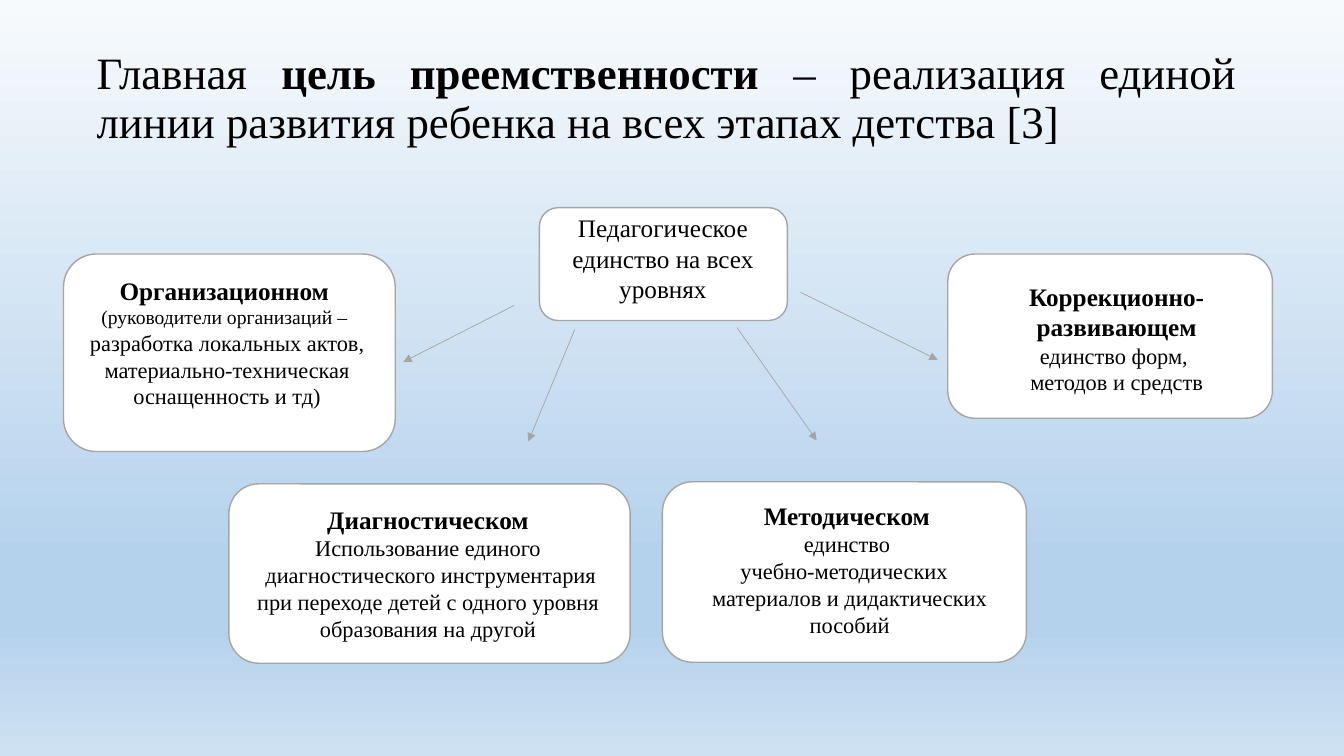
from copy import deepcopy

from lxml import etree
from pptx import Presentation
from pptx.dml.color import RGBColor
from pptx.enum.shapes import MSO_CONNECTOR, MSO_SHAPE
from pptx.enum.text import MSO_ANCHOR, PP_ALIGN
from pptx.oxml.ns import qn
from pptx.util import Inches, Pt

STRAIGHT, ROUNDED = MSO_CONNECTOR.STRAIGHT, MSO_SHAPE.ROUNDED_RECTANGLE
CENTER, JUSTIFY = PP_ALIGN.CENTER, PP_ALIGN.JUSTIFY
TOP, MIDDLE = MSO_ANCHOR.TOP, MSO_ANCHOR.MIDDLE

FONT, BLACK, WHITE, GREY = "Times New Roman", "000000", "FFFFFF", "A5A5A5"
BACKGROUND = [(0, "F7FAFD"), (0.74, "B5D2EC"), (0.83, "B5D2EC"), (1, "CEE1F2")]

# A paragraph is a list of runs: (text, size, bold)
TITLE_BOX = (0.86, 0.26, 11.5, 1.45)
TITLE = [[("Главная ", 32, False), ("цель преемственности ", 32, True),
          ("– реализация единой линии развития ребенка на всех этапах детства [3]", 32, False)]]

# Card: frame, text area, wrap, paragraphs (text, size, bold)
CARDS = [
    ((5.35, 2.06, 2.46, 1.12), (5.43, 2.06, 2.29, 1.01), True, [
        ("Педагогическое единство на всех уровнях", 18, False)]),
    ((0.63, 2.52, 3.29, 1.96), (0.72, 2.68, 3.01, 1.45), False, [
        ("Организационном", 18, True),
        ("(руководители организаций –", 14, False),
        (" разработка локальных актов,", 16, False),
        (" материально-техническая", 16, False),
        (" оснащенность и тд)", 16, False)]),
    ((2.27, 4.8, 3.98, 1.78), (2.32, 4.95, 3.85, 1.48), True, [
        ("Диагностическом", 18, True),
        ("Использование единого", 16, False),
        (" диагностического инструментария", 16, False),
        (" при переходе детей с одного уровня ", 16, False),
        ("образования на другой", 16, False)]),
    ((6.57, 4.78, 3.61, 1.79), (6.85, 4.91, 3.1, 1.78), False, [
        ("Методическом", 18, True),
        ("единство", 16, False),
        ("учебно-методических ", 16, False),
        (" материалов и дидактических", 16, False),
        (" пособий", 16, False)]),
    ((9.4, 2.52, 3.22, 1.63), (10.1, 2.74, 1.95, 1.25), False, [
        ("Коррекционно-", 18, True),
        ("развивающем", 18, True),
        ("единство форм, ", 16, False),
        ("методов и средств", 16, False)]),
]

ARROWS = [
    (5.1, 3.03, 4, 3.59),
    (5.7, 3.27, 5.24, 4.38),
    (7.31, 3.25, 8.1, 4.37),
    (7.94, 2.9, 9.3, 3.57),
]


def color(value):
    return RGBColor.from_string(value)


def inches(values):
    return [Inches(v) for v in values]


def paint_background(s):
    fill = s.background.fill
    fill.gradient()
    fill.gradient_angle = 270
    stops = fill.gradient_stops
    stop_list = s.background._cSld.find(".//" + qn("a:gsLst"))
    for _ in range(len(BACKGROUND) - len(stops)):
        stop_list.append(deepcopy(stop_list[0]))
    for stop, (position, value) in zip(fill.gradient_stops, BACKGROUND):
        stop.position = position
        stop.color.rgb = color(value)


def add_text(shapes, box, paragraphs, align=CENTER, anchor=TOP, wrap=True, spacing=1.0):
    tf = shapes.add_textbox(*inches(box)).text_frame
    tf.word_wrap = wrap
    tf.vertical_anchor = anchor
    for i, runs in enumerate(paragraphs):
        p = tf.add_paragraph() if i else tf.paragraphs[0]
        p.alignment = align
        p.line_spacing = spacing
        for text, size, bold in runs:
            r = p.add_run()
            r.text = text
            r.font.name = FONT
            r.font.size = Pt(size)
            r.font.bold = bold
            r.font.color.rgb = color(BLACK)


def add_card(s, frame, text_area, wrap, lines):
    shapes = s.shapes.add_group_shape().shapes
    sp = shapes.add_shape(ROUNDED, *inches(frame))
    sp.shadow.inherit = False
    sp.fill.solid()
    sp.fill.fore_color.rgb = color(WHITE)
    sp.line.color.rgb = color(GREY)
    sp.line.width = Pt(1)
    add_text(shapes, text_area, [[line] for line in lines], wrap=wrap)


def add_arrow(s, ends):
    arrow = s.shapes.add_connector(STRAIGHT, *inches(ends))
    arrow.line.color.rgb = color(GREY)
    arrow.line.width = Pt(0.5)
    etree.SubElement(arrow.line._get_or_add_ln(), qn("a:tailEnd"), type="triangle")
    etree.SubElement(arrow._element.spPr, qn("a:effectLst"))


def main():
    prs = Presentation()
    prs.slide_width, prs.slide_height = inches((13.33, 7.5))
    s = prs.slides.add_slide(prs.slide_layouts[6])
    paint_background(s)
    add_text(s.shapes, TITLE_BOX, TITLE, JUSTIFY, MIDDLE, spacing=0.9)
    for card in CARDS:
        add_card(s, *card)
    for ends in ARROWS:
        add_arrow(s, ends)
    prs.save("out.pptx")


if __name__ == "__main__":
    main()
